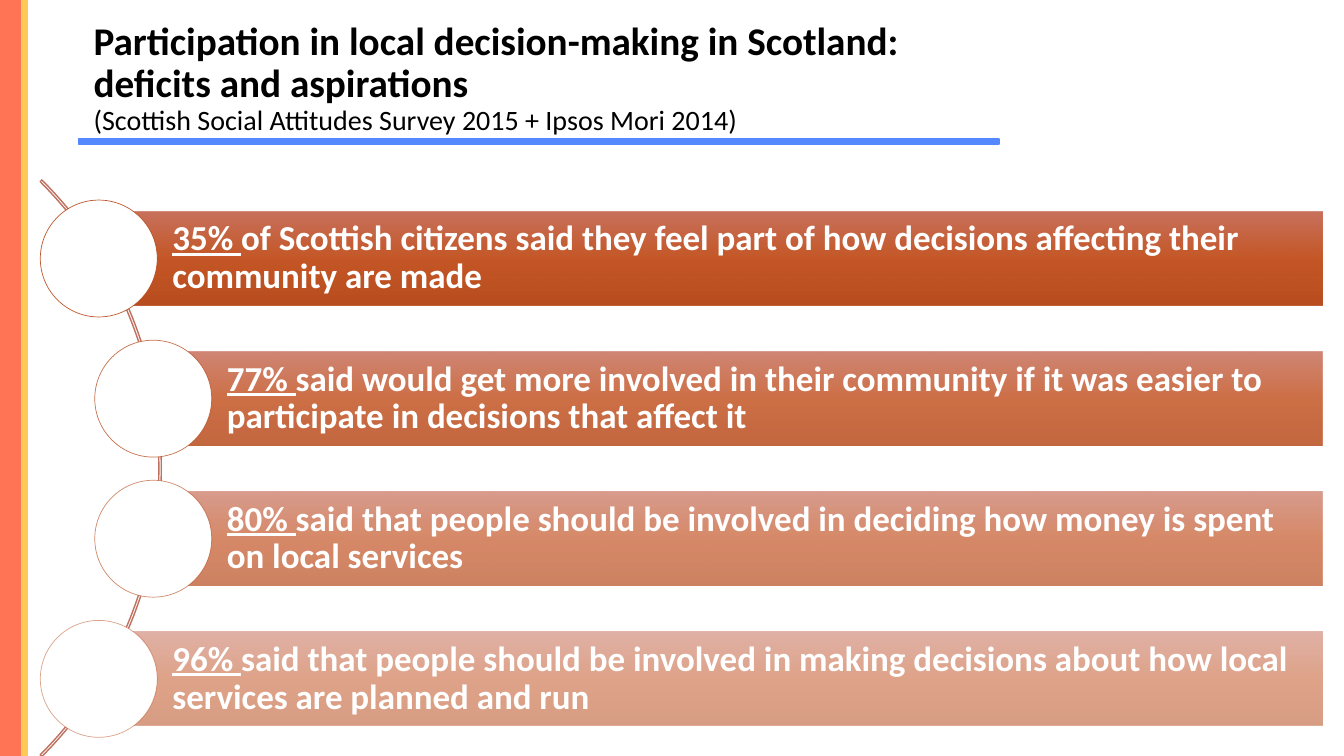
from lxml import etree
from pptx import Presentation, util as u
from pptx.dml.color import RGBColor
from pptx.enum import shapes as sh, text as tx
from pptx.oxml import parse_xml
from pptx.oxml.ns import nsdecls, qn

FACTS = [
    (0.98, 90, "35% ", "of Scottish citizens said they feel part of how decisions "
     "affecting their community are made"),
    (1.52, 77, "77% ", "said would get more involved in their community if it was "
     "easier to participate in decisions that affect it"),
    (1.52, 63, "80% ", "said that people should be involved in deciding how money "
     "is spent on local services"),
    (0.98, 50, "96% ", "said that people should be involved in making decisions "
     "about how local services are planned and run"),
]
SHADES = [(0, "C2634D"), (50, "BF4611"), (100, "B13B08")]


def color(code):
    return RGBColor.from_string(code)


def draw(slide, kind, box, fill=None, line=None, width=1):
    shape = slide.shapes.add_shape(kind, *map(u.Inches, box))
    shape.shadow.inherit = False
    if fill:
        shape.fill.solid()
        shape.fill.fore_color.rgb = color(fill)
    else:
        shape.fill.background()
    if line:
        shape.line.color.rgb = color(line)
        shape.line.width = u.Pt(width)
    else:
        shape.line.fill.background()
    return shape


def shade(shape, alpha):
    stops = "".join(
        f'<a:gs pos="{pos * 1000}"><a:srgbClr val="{code}">'
        f'<a:alpha val="{alpha * 1000}"/></a:srgbClr></a:gs>'
        for pos, code in SHADES)
    grad = parse_xml(f'<a:gradFill {nsdecls("a")} rotWithShape="1"><a:gsLst>{stops}'
                     '</a:gsLst><a:lin ang="5400000" scaled="0"/></a:gradFill>')
    props = shape.element.spPr
    props.replace(props.find(qn("a:noFill")), grad)


def stripes(slide, left, top, high):
    for shift, wide, code in [(0.2, 0.04, "5588FF"), (0.22, 0.05, "FFC955"),
                              (0, 0.2, "FF7455")]:
        draw(slide, sh.MSO_SHAPE.RECTANGLE, (left + shift, top, wide, high), code, code)


def title(slide, left, top, wide, high):
    draw(slide, sh.MSO_SHAPE.RECTANGLE, (left - 0.05, top + 1.25, 9.13, 0.05),
         "5588FF", "5588FF")
    box = slide.shapes.add_textbox(*map(u.Inches, (left, top, wide, high)))
    frame = box.text_frame
    frame.word_wrap = True
    frame.vertical_anchor = tx.MSO_ANCHOR.MIDDLE
    para = frame.paragraphs[0]
    para.line_spacing = 0.9
    para.font.name = "Calibri"
    para.font.color.rgb = color("000000")
    lines = [("Participation in local decision-making in Scotland: ", 28, True),
             ("deficits and aspirations", 28, True),
             ("(Scottish Social Attitudes Survey 2015 + Ipsos Mori 2014)", 20, False)]
    for i, (words, size, bold) in enumerate(lines):
        if i:
            para.add_line_break()
        run = para.add_run()
        run.text = words
        run.font.size = u.Pt(size)
        run.font.bold = bold


def fact(slide, left, top, wide, high, alpha, share, words):
    bar = draw(slide, sh.MSO_SHAPE.RECTANGLE, (left, top, wide, high))
    shade(bar, alpha)
    frame = bar.text_frame
    frame.word_wrap = True
    frame.vertical_anchor = tx.MSO_ANCHOR.MIDDLE
    frame.margin_left = u.Inches(0.73)
    frame.margin_right = frame.margin_top = frame.margin_bottom = u.Inches(0.07)
    para = frame.paragraphs[0]
    para.alignment = tx.PP_ALIGN.LEFT
    para.line_spacing = 0.9
    para.font.name = "Calibri"
    para.font.size = u.Pt(25)
    para.font.bold = True
    para.font.color.rgb = color("FFFFFF")
    for part, under in [(share, True), (words, False)]:
        run = para.add_run()
        run.text = part
        run.font.underline = under
    size = 1.16
    dot = draw(slide, sh.MSO_SHAPE.OVAL,
               (left - size / 2, top + (high - size) / 2, size, size),
               "FFFFFF", "B74919", 0.5)
    tint = dot.line._ln.find(".//" + qn("a:srgbClr"))
    etree.SubElement(tint, qn("a:alpha")).set("val", str(alpha * 1000))


def facts(slide, top, right, high, pitch):
    arc = draw(slide, sh.MSO_SHAPE.BLOCK_ARC, (-6.49, top - 1.5, 8.09, 8.09),
               line="C0705F")
    for i, value in enumerate((189, 27, 0.003)):
        arc.adjustments[i] = value
    for i, (left, *rest) in enumerate(FACTS):
        fact(slide, left, top + i * pitch, right - left, high, *rest)


def main():
    deck = Presentation()
    deck.slide_width = u.Inches(13.33)
    deck.slide_height = u.Inches(7.5)
    slide = deck.slides.add_slide(deck.slide_layouts[6])
    stripes(slide, 0, 0, 7.5)
    facts(slide, 2.1, 13.12, 0.93, 1.39)
    title(slide, 0.83, 0.13, 9.77, 1.3)
    deck.save("out.pptx")


if __name__ == "__main__":
    main()
